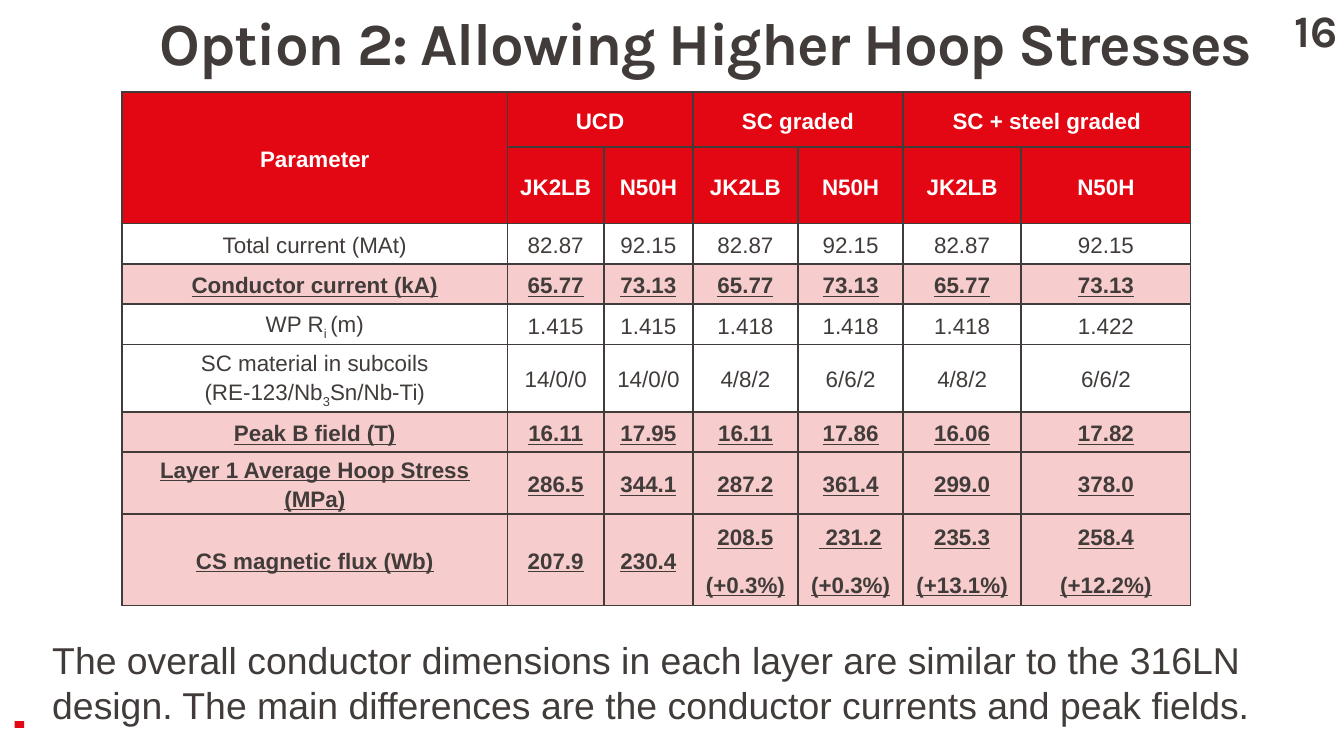
"""Build the slide comparing conductor options at higher hoop stresses."""
import pptx
import pptx.dml.color
import pptx.enum.shapes
import pptx.enum.text
import pptx.oxml.ns
import pptx.util
from lxml import etree

RGBColor = pptx.dml.color.RGBColor
Pt = pptx.util.Pt
ANCHOR = pptx.enum.text.MSO_ANCHOR
ALIGN = pptx.enum.text.PP_ALIGN

RED = RGBColor(0xE3, 0x06, 0x13)
PINK = RGBColor(0xF6, 0xCC, 0xCC)
WHITE = RGBColor(0xFF, 0xFF, 0xFF)
INK = RGBColor(0x41, 0x3C, 0x3A)

WIDTH = pptx.util.Inches(10)
HEIGHT = WIDTH * 9 // 16
COLS = [28.65, 7.2, 6.6, 7.85, 7.8, 8.8, 12.6]
ROWS = [7.3, 10.14, 5.34, 5.34, 5.34, 8.9, 5.34, 7.47, 12.1]
GROUPS = ["UCD", "SC graded", "SC + steel graded"]
STEELS = ["JK2LB", "N50H"]
DATA = [
    (False, ["Total current (MAt)"] + ["82.87", "92.15"] * 3),
    (True, ["Conductor current (kA)"] + ["65.77", "73.13"] * 3),
    (False, ["WP R_i _(m)", "1.415", "1.415", "1.418", "1.418", "1.418", "1.422"]),
    (False, ["SC material in subcoils\n(RE-123/Nb_3_Sn/Nb-Ti)", "14/0/0", "14/0/0",
             "4/8/2", "6/6/2", "4/8/2", "6/6/2"]),
    (True, ["Peak B field (T)", "16.11", "17.95", "16.11", "17.86", "16.06", "17.82"]),
    (True, ["Layer 1 Average Hoop Stress (MPa)", "286.5", "344.1", "287.2", "361.4",
            "299.0", "378.0"]),
    (True, ["CS magnetic flux (Wb)", "207.9", "230.4", "208.5|(+0.3%)",
            " 231.2|(+0.3%)", "235.3|(+13.1%)", "258.4|(+12.2%)"]),
]


def across(pct):
    """Return a length as a percentage of the slide width."""
    return round(WIDTH * pct / 100)


def down(pct):
    """Return a length as a percentage of the slide height."""
    return round(HEIGHT * pct / 100)


def place(x, y, w, h):
    """Return left, top, width and height from percentages of the slide."""
    return across(x), down(y), across(w), down(h)


def add_run(p, text, size, color, name="Arial", bold=False, underline=False):
    """Add one formatted run to a paragraph."""
    r = p.add_run()
    r.text = text
    r.font.size, r.font.name, r.font.bold = Pt(size), name, bold
    r.font.underline = underline
    r.font.color.rgb = color
    return r


def add_text(s, box, text, size, name, bold=False, insets=(0.1, 0.05, 0.1, 0.05)):
    """Add a text box with one run; return its paragraph and run."""
    tf = s.shapes.add_textbox(*place(*box)).text_frame
    tf.word_wrap = True
    tf.vertical_anchor = ANCHOR.TOP
    tf.margin_left, tf.margin_top, tf.margin_right, tf.margin_bottom = map(
        pptx.util.Inches, insets)
    p = tf.paragraphs[0]
    return p, add_run(p, text, size, INK, name, bold)


def add_marker(s):
    """Add the small red footer mark."""
    sp = s.shapes.add_shape(pptx.enum.shapes.MSO_SHAPE.RECTANGLE,
                            *place(1.1, 95.4, 0.7, 0.9))
    sp.shadow.inherit = False
    sp.fill.solid()
    sp.fill.fore_color.rgb = RED
    sp.line.fill.background()


def set_borders(cell):
    """Give a cell thin dark lines on all four sides."""
    qn = pptx.oxml.ns.qn
    tcPr = cell._tc.get_or_add_tcPr()
    for i, side in enumerate(("a:lnL", "a:lnR", "a:lnT", "a:lnB")):
        ln = etree.Element(qn(side), w=str(Pt(1)))
        fill = etree.SubElement(ln, qn("a:solidFill"))
        etree.SubElement(fill, qn("a:srgbClr"), val=str(INK))
        tcPr.insert(i, ln)


def style_cell(cell, fill):
    """Set the fill, borders, margins and anchor of a cell."""
    cell.fill.solid()
    cell.fill.fore_color.rgb = fill
    cell.margin_left = cell.margin_right = pptx.util.Inches(0.07)
    cell.margin_top = cell.margin_bottom = 0
    cell.vertical_anchor = ANCHOR.MIDDLE
    set_borders(cell)


def write_cell(cell, text, color, bold, underline=False):
    """Write a cell: | parts paragraphs, newline breaks, _ encloses subscripts."""
    tf = cell.text_frame
    for i, part in enumerate(text.split("|")):
        p = tf.add_paragraph() if i else tf.paragraphs[0]
        p.alignment, p.line_spacing, p.space_after = ALIGN.CENTER, 1.15, Pt(10)
        for j, line in enumerate(part.split("\n")):
            if j:
                p.add_line_break()
            for k, piece in enumerate(line.split("_")):
                r = add_run(p, piece, 12, color, bold=bold, underline=underline)
                if k % 2:
                    r.font._element.set("baseline", "-25000")


def add_header(table):
    """Fill the two header rows and merge their group cells."""
    for row in range(2):
        for col in range(len(COLS)):
            style_cell(table.cell(row, col), RED)
    table.cell(0, 0).merge(table.cell(1, 0))
    write_cell(table.cell(0, 0), "Parameter", WHITE, True)
    for i, group in enumerate(GROUPS):
        first = 1 + 2 * i
        table.cell(0, first).merge(table.cell(0, first + 1))
        write_cell(table.cell(0, first), group, WHITE, True)
        for j, steel in enumerate(STEELS):
            write_cell(table.cell(1, first + j), steel, WHITE, True)


def add_comparison(s):
    """Add the table of conductor parameters."""
    box = place(9.1, 12.15, sum(COLS), sum(ROWS))
    table = s.shapes.add_table(len(ROWS), len(COLS), *box).table
    table.horz_banding = False
    for column, pct in zip(table.columns, COLS):
        column.width = across(pct)
    for row, pct in zip(table.rows, ROWS):
        row.height = down(pct)
    add_header(table)
    for i, (key, values) in enumerate(DATA, start=2):
        for j, value in enumerate(values):
            style_cell(table.cell(i, j), PINK if key else WHITE)
            write_cell(table.cell(i, j), value, INK, key, key)


def main():
    """Build and save the slide."""
    prs = pptx.Presentation()
    prs.slide_width, prs.slide_height = WIDTH, HEIGHT
    s = prs.slides.add_slide(prs.slide_layouts[6])
    add_marker(s)
    p, r = add_text(s, (94.9, 0.36, 6.1, 5.34), "16", 24, "Karla", True, (0, 0, 0, 0))
    p.alignment = ALIGN.CENTER
    p, r = add_text(s, (9.9, 1.78, 85.8, 10.32), "Option 2: Allowing Higher Hoop Stresses",
                    32, "Karla", True, (0.2, 0, 0.08, 0.05))
    p.line_spacing = 0.9
    r.font._element.set("spc", "-70")
    add_comparison(s)
    p, r = add_text(s, (2.9, 83.45, 97.1, 13.7),
                    "The overall conductor dimensions in each layer are similar to the 316LN "
                    "design. The main differences are the conductor currents and peak fields.",
                    20, "Arial")
    p.space_after = Pt(12)
    prs.save("out.pptx")


if __name__ == "__main__":
    main()
